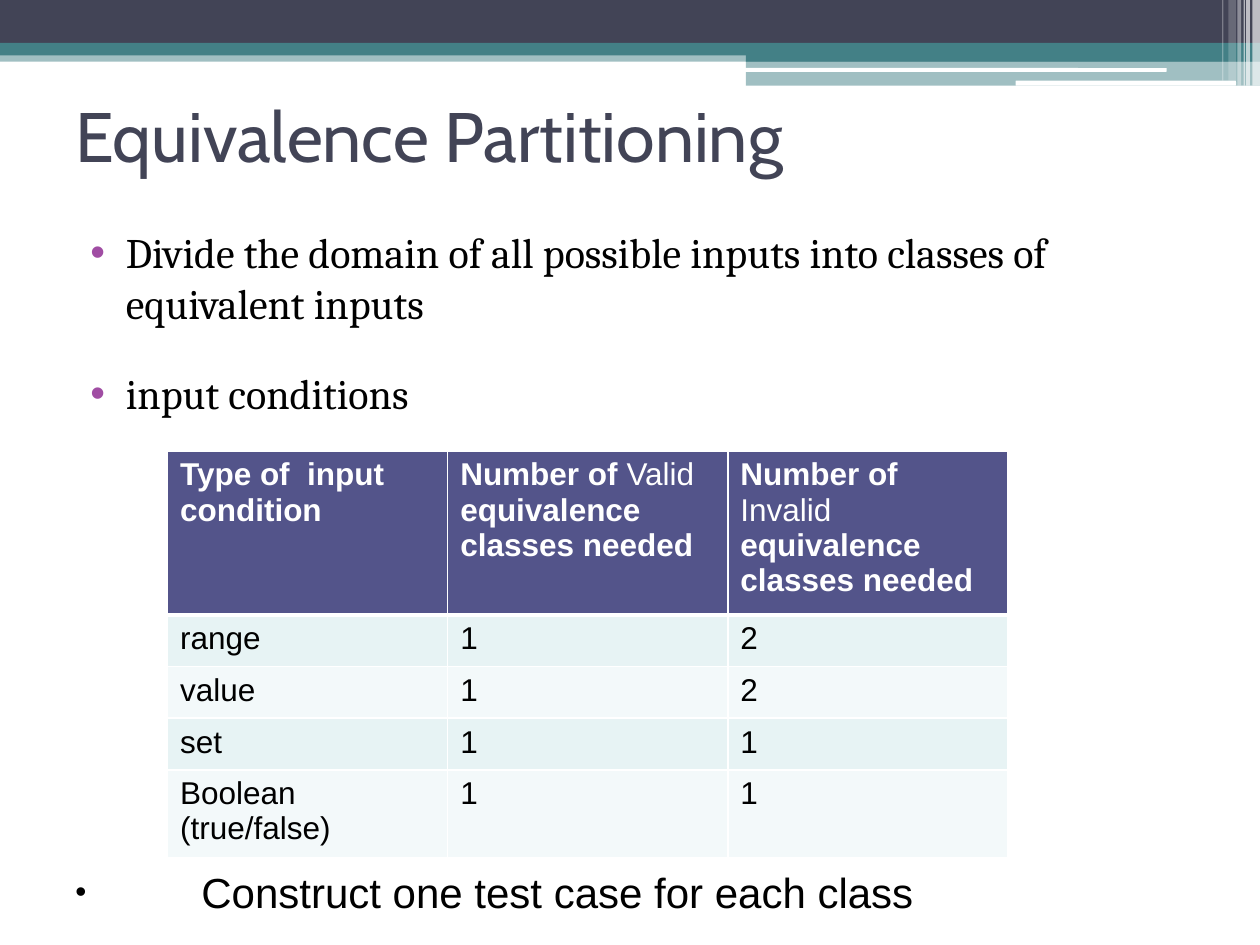
from dataclasses import dataclass

from lxml.etree import SubElement as Sub
from pptx import Presentation
from pptx.dml.color import RGBColor as Rgb
from pptx.enum.shapes import MSO_SHAPE as Kind
from pptx.enum.text import MSO_ANCHOR as Anchor
from pptx.oxml.ns import qn
from pptx.util import Inches, Pt

COLS, ROWS = 100, 75  # grid of the slide
UNIT = Inches(10) / COLS


@dataclass(frozen=True)
class Theme:
    dark: str = "424456"
    teal: str = "438086"
    white: str = "FFFFFF"
    black: str = "000000"
    dot: str = "A04DA3"
    head: str = "53548A"
    bands: tuple = ("E7F3F4", "F3F9FA")
    title: str = "Cabin"
    serif: str = "Cambria"
    sans: str = "Arial"
    big: int = 40
    mid: int = 24
    small: int = 18


@dataclass(frozen=True)
class Box:
    """An area in grid columns and rows."""
    x: float
    y: float
    w: float
    h: float

    def cut(self, x, y, w, h):
        return Box(self.x + x, self.y + y, w, h)

    def emu(self):
        return [round(n * UNIT) for n in (self.x, self.y, self.w, self.h)]


T = Theme()


def tint(fill, color):
    fill.solid()
    fill.fore_color.rgb = Rgb.from_string(color)


def block(slide, box, color, alpha=100, kind=Kind.RECTANGLE):
    shape = slide.shapes.add_shape(kind, *box.emu())
    shape.shadow.inherit = False
    shape.line.fill.background()
    tint(shape.fill, color)
    if alpha < 100:
        node = shape.element.spPr.find(qn("a:solidFill"))[0]
        Sub(node, qn("a:alpha"), val=str(alpha * 1000))


def style(para, name, size, color, bold=None):
    font = para.font
    font.name, font.size, font.bold = name, Pt(size), bold
    font.color.rgb = Rgb.from_string(color)


def bullet(para, left, hang, color, share=100):
    props = para._p.get_or_add_pPr()
    props.set("marL", str(round(left * UNIT)))
    props.set("indent", str(round(-hang * UNIT)))
    Sub(Sub(props, qn("a:buClr")), qn("a:srgbClr"), val=color)
    Sub(props, qn("a:buSzPct"), val=str(share * 1000))
    Sub(props, qn("a:buFont"), typeface=T.sans)
    Sub(props, qn("a:buChar"), char="•")


def frame(slide, box):
    text = slide.shapes.add_textbox(*box.emu()).text_frame
    text.word_wrap = True
    return text


def banner(slide, box):
    # Bars across the top and the step on the right
    step = 59.2
    for x, y, h, color, alpha in (
        (0, 4, 0.9, T.teal, 50),
        (0, 0, 3.4, T.dark, 100),
        (0, 3.4, 1, T.teal, 100),
        (step, 3.9, 1, T.teal, 100),
        (step, 4.8, 2, T.teal, 50),
    ):
        block(slide, box.cut(x, y, box.w - x, h), color, alpha)
    # White rules
    for x, y, w, h in ((59.1, 5.4, 33.5, 0.3), (80.6, 6.4, 17.5, 0.4)):
        block(slide, box.cut(x, y, w, h), T.white, kind=Kind.ROUNDED_RECTANGLE)
    # Pale stripes at the right edge
    for x, w, h, alpha in (
        (99.4, 0.6, 6.8, 65),
        (98.9, 0.3, 6.8, 65),
        (98.7, 0.1, 6.8, 60),
        (98.2, 0.3, 6.8, 40),
        (97.5, 0.6, 6.4, 20),
        (97, 0.1, 6.4, 30),
    ):
        block(slide, box.cut(x, 0, w, h), T.white, alpha)


def title(slide, box, words):
    text = frame(slide, box)
    text.vertical_anchor = Anchor.MIDDLE
    para = text.paragraphs[0]
    para.text = words
    style(para, T.title, T.big, T.dark)


def points(slide, box, items):
    text = frame(slide, box)
    for i, words in enumerate(items):
        para = text.add_paragraph() if i else text.paragraphs[0]
        para.text = words
        bullet(para, 4, 2.8, T.dot)
        para.space_before = Pt(23 if i else 3)
        style(para, T.serif, T.mid, T.black)


def edge(cell, top, base):
    props = cell._tc.get_or_add_tcPr()
    sides = (("a:lnL", 1), ("a:lnR", 1), ("a:lnT", top), ("a:lnB", base))
    for i, (tag, width) in enumerate(sides):
        line = Sub(props, qn(tag), w=str(Pt(width)))
        Sub(Sub(line, qn("a:solidFill")), qn("a:srgbClr"), val=T.white)
        props.insert(i, line)  # borders come before the fill


def grid(slide, box, heads, rows, highs):
    table = slide.shapes.add_table(
        len(rows) + 1, len(heads), *box.emu()).table
    for row, high in zip(table.rows, highs):
        row.height = round(high * UNIT)
    # Heads: bold, with one plain word in some
    for c, runs in enumerate(heads):
        cell = table.cell(0, c)
        para = cell.text_frame.paragraphs[0]
        for i, words in enumerate(runs):
            run = para.add_run()
            run.text = words
            run.font.bold = i != 1
        style(para, T.sans, T.small, T.white)
        tint(cell.fill, T.head)
        edge(cell, 1, 3)
    # Banded rows
    for r, row in enumerate(rows):
        for c, words in enumerate(row):
            cell = table.cell(r + 1, c)
            cell.text = words
            style(cell.text_frame.paragraphs[0],
                  T.sans, T.small, T.black, False)
            tint(cell.fill, T.bands[r % 2])
            edge(cell, 1 if r else 3, 1)


def closing(slide, box, words):
    para = frame(slide, box).paragraphs[0]
    para.text = words
    bullet(para, 10, 10, T.black, 75)
    style(para, T.sans, T.mid, T.black)


def main():
    deck = Presentation()
    deck.slide_width, deck.slide_height = Box(0, 0, COLS, ROWS).emu()[2:]
    slide = deck.slides.add_slide(deck.slide_layouts[6])
    banner(slide, Box(0, 0, COLS, 6.8))
    title(slide, Box(5, 3, 90, 15.3), "Equivalence Partitioning")
    points(slide, Box(5, 17.5, 90, 44.5), (
        "Divide the domain of all possible inputs into classes of "
        "equivalent inputs",
        "input conditions"))
    tail = "equivalence classes needed"
    heads = (("Type of  input condition",),
             ("Number of ", "Valid ", tail),
             ("Number of ", "Invalid ", tail))
    rows = (("range", "1", "2"), ("value", "1", "2"),
            ("set", "1", "1"), ("Boolean (true/false)", "1", "1"))
    grid(slide, Box(13.3, 35.8, 66.7, 31), heads, rows,
         (12.2, 4.1, 4.1, 4.1, 6.5))
    closing(slide, Box(5, 68.3, 90, 5.1),
            "Construct one test case for each class")
    deck.save("out.pptx")


if __name__ == "__main__":
    main()
